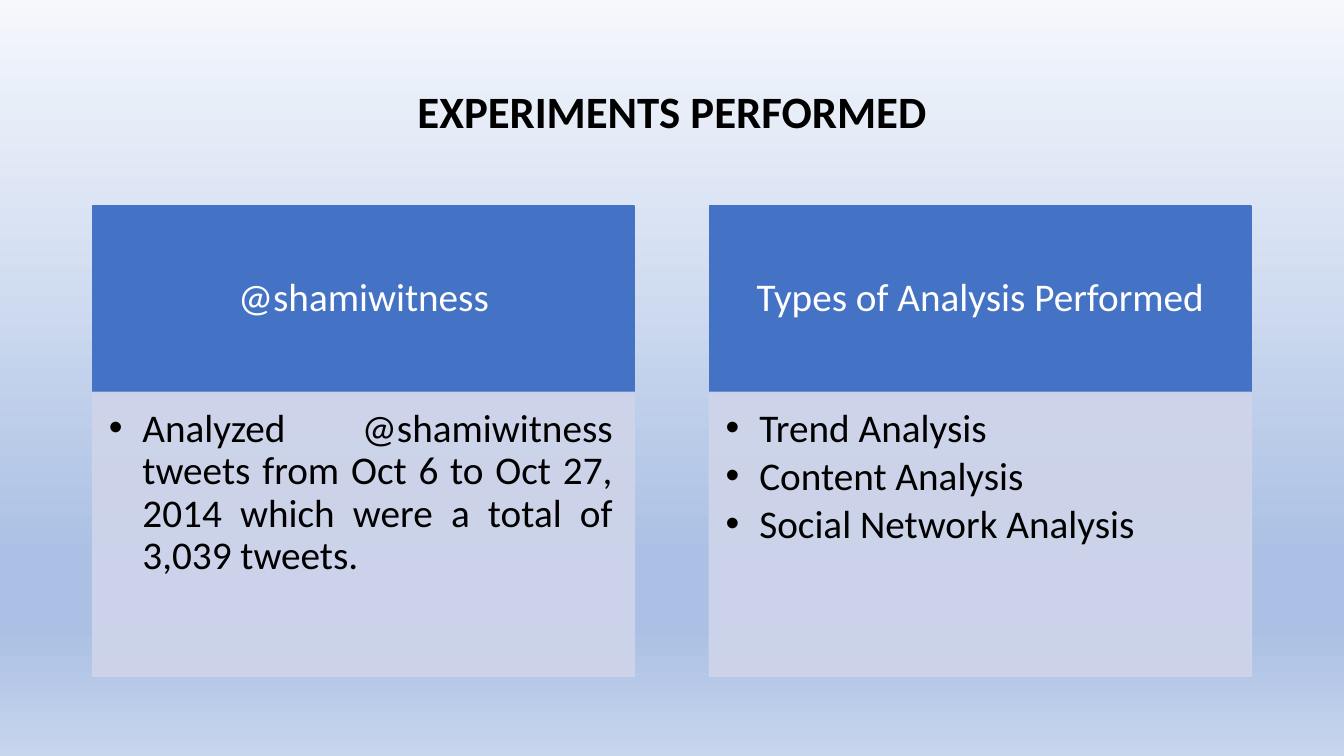
"""Build the slide on the experiments performed."""
from lxml import etree
from pptx import Presentation
from pptx.dml import color
from pptx.enum import shapes, text
from pptx.oxml import ns
from pptx.util import Inches, Pt

TITLE = "EXPERIMENTS PERFORMED"
CARDS = [
    ("@shamiwitness",
     ["Analyzed @shamiwitness tweets from Oct 6 to Oct 27, 2014 "
      "which were a total of 3,039 tweets."]),
    ("Types of Analysis Performed",
     ["Trend Analysis", "Content Analysis", "Social Network Analysis"]),
]
STOPS = [(0, "F6F8FC"), (14, "E8EEF8"), (74, "ABC0E4"),
         (83, "ABC0E4"), (100, "C7D5ED")]
BLUE, PALE, BLACK, WHITE = "4472C4", "CFD5EA", "000000", "FFFFFF"
LEFT, TOP, WIDTH, GAP = 0.69, 1.53, 4.03, 0.56
HEAD, BODY = 1.39, 2.11
ALIGN, ANCHOR = text.PP_ALIGN, text.MSO_ANCHOR


def rgb(code):
    return color.RGBColor.from_string(code)


def add(parent, tag, **attrs):
    return etree.SubElement(parent, ns.qn(tag), attrs)


def paint(slide):
    fill = slide.background.fill
    fill.gradient()
    fill.gradient_angle = 270
    stops = slide.element.xpath(".//a:gsLst")[0]
    for old in list(stops):
        stops.remove(old)
    for pos, code in STOPS:
        stop = add(stops, "a:gs", pos=str(pos * 1000))
        add(stop, "a:srgbClr", val=code)


def write(shape, lines, size, ink, align, anchor, insets,
          after=0, bold=False, bullet=False):
    frame = shape.text_frame
    frame.word_wrap = True
    frame.vertical_anchor = anchor
    (frame.margin_left, frame.margin_top,
     frame.margin_right, frame.margin_bottom) = map(Inches, insets)
    frame.text = "\n".join(lines)
    for para in frame.paragraphs:
        para.alignment = align
        para.line_spacing = 0.9
        para.space_after = Pt(after)
        if bullet:
            props = para._p.get_or_add_pPr()
            props.set("marL", str(Inches(0.25)))
            props.set("indent", str(-Inches(0.25)))
            add(props, "a:buFont", typeface="Arial")
            add(props, "a:buChar", char="•")
        font = para.font
        font.name, font.size, font.bold = "Calibri", Pt(size), bold
        font.color.rgb = rgb(ink)


def panel(slide, left, top, high, code, alpha=100):
    box = slide.shapes.add_shape(
        shapes.MSO_SHAPE.RECTANGLE,
        *map(Inches, (left, top, WIDTH, high)))
    box.shadow.inherit = False
    box.fill.solid()
    box.fill.fore_color.rgb = rgb(code)
    box.line.color.rgb = rgb(code)
    box.line.width = Pt(1)
    if alpha < 100:
        for tint in box.element.spPr.iter(ns.qn("a:srgbClr")):
            add(tint, "a:alpha", val=str(alpha * 1000))
    return box


def main():
    deck = Presentation()
    deck.slide_width = Inches(10)
    deck.slide_height = deck.slide_width * 9 // 16
    slide = deck.slides.add_slide(deck.slide_layouts[6])
    paint(slide)
    title = slide.shapes.add_textbox(
        *map(Inches, (LEFT, 0.3, 2 * WIDTH + GAP, 1.09)))
    write(title, [TITLE], 24, BLACK, ALIGN.CENTER, ANCHOR.MIDDLE,
          (0.1, 0.05, 0.1, 0.05), bold=True)
    for i, (name, items) in enumerate(CARDS):
        left = LEFT + i * (WIDTH + GAP)
        head = panel(slide, left, TOP, HEAD, BLUE)
        write(head, [name], 21, WHITE, ALIGN.CENTER, ANCHOR.MIDDLE,
              (0.16, 0.09, 0.16, 0.09))
        body = panel(slide, left, TOP + HEAD, BODY, PALE, 90)
        write(body, items, 21, BLACK, ALIGN.JUSTIFY, ANCHOR.TOP,
              (0.12, 0.12, 0.16, 0.18), after=3, bullet=True)
    deck.save("out.pptx")


if __name__ == "__main__":
    main()
